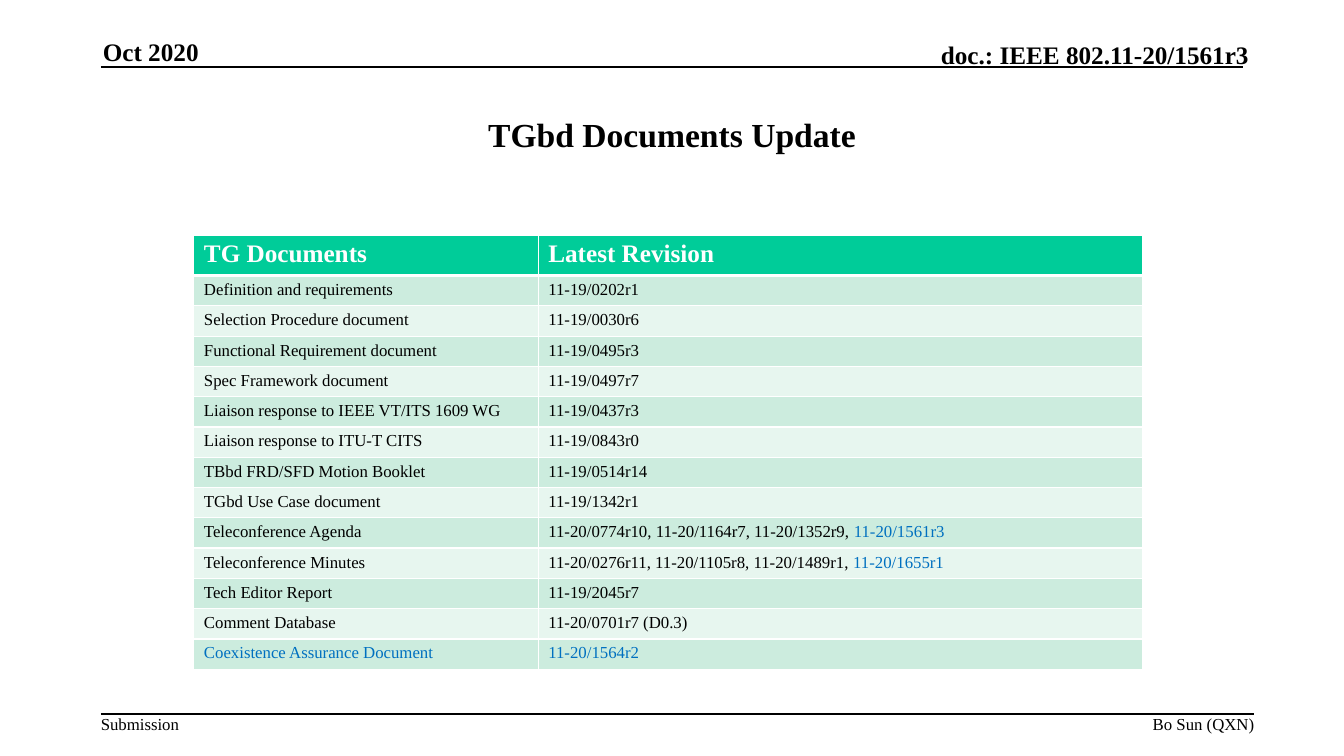
from dataclasses import dataclass

import lxml.etree
import pptx
import pptx.dml.color
import pptx.enum.shapes
import pptx.enum.text
import pptx.oxml.ns
import pptx.util

Pt = pptx.util.Pt
Align = pptx.enum.text.PP_ALIGN
Anchor = pptx.enum.text.MSO_ANCHOR
qn = pptx.oxml.ns.qn

FONT = "Times New Roman"
COLORS = {
    "black": "000000",
    "white": "FFFFFF",
    "blue": "0070C0",
    "header": "00CC99",
    "odd": "CCECDE",
    "even": "E7F6EF",
}
COLUMN_WIDTHS = (246, 432)
HEADER_HEIGHT = 27
ROW_HEIGHT = 20.5


@dataclass
class Label:
    text: str
    left: float
    top: float
    width: float
    height: float
    size: float
    bold: bool = False
    align: Align = Align.LEFT
    anchor: Anchor = Anchor.TOP


@dataclass
class Rule:
    left: float
    right: float
    y: float


@dataclass
class Document:
    name: str
    revisions: str = ""
    update: str = ""
    name_color: str = "black"


LABELS = [
    Label("Oct 2020", 73.5, 26, 196.5, 21.5, 18, True, anchor=Anchor.BOTTOM),
    Label("doc.: IEEE 802.11-20/1561r3", 525, 28, 367, 21.5, 18, True, Align.RIGHT, Anchor.BOTTOM),
    Label("TGbd Documents Update", 72, 54, 816, 83.5, 24, True, Align.CENTER, Anchor.MIDDLE),
    Label("Submission", 72, 510, 56, 14.5, 12),
    Label("Bo Sun (QXN)", 562, 510, 334, 14.5, 12, align=Align.RIGHT),
]
RULES = [Rule(72, 888, 48), Rule(72, 896, 510)]
DOCUMENTS = [
    Document("Definition and requirements", "11-19/0202r1"),
    Document("Selection Procedure document", "11-19/0030r6"),
    Document("Functional Requirement document", "11-19/0495r3"),
    Document("Spec Framework document", "11-19/0497r7"),
    Document("Liaison response to IEEE VT/ITS 1609 WG", "11-19/0437r3"),
    Document("Liaison response to ITU-T CITS", "11-19/0843r0"),
    Document("TBbd FRD/SFD Motion Booklet", "11-19/0514r14"),
    Document("TGbd Use Case document", "11-19/1342r1"),
    Document("Teleconference Agenda", "11-20/0774r10, 11-20/1164r7, 11-20/1352r9, ", "11-20/1561r3"),
    Document("Teleconference Minutes", "11-20/0276r11, 11-20/1105r8, 11-20/1489r1, ", "11-20/1655r1"),
    Document("Tech Editor Report", "11-19/2045r7"),
    Document("Comment Database", "11-20/0701r7 (D0.3)"),
    Document("Coexistence Assurance Document", update="11-20/1564r2", name_color="blue"),
]


def rgb(name: str) -> pptx.dml.color.RGBColor:
    return pptx.dml.color.RGBColor.from_string(COLORS[name])


def set_font(font, size: float, bold: bool) -> None:
    font.name = FONT
    font.size = Pt(size)
    font.bold = bold


def add_label(slide, label: Label) -> None:
    sp = slide.shapes.add_textbox(Pt(label.left), Pt(label.top), Pt(label.width), Pt(label.height))
    tf = sp.text_frame
    tf.word_wrap = True
    tf.vertical_anchor = label.anchor
    tf.margin_left = tf.margin_right = tf.margin_top = tf.margin_bottom = 0
    p = tf.paragraphs[0]
    p.text = label.text
    p.alignment = label.align
    set_font(p.font, label.size, label.bold)
    p.font.color.rgb = rgb("black")


def add_rule(slide, rule: Rule) -> None:
    sp = slide.shapes.add_connector(
        pptx.enum.shapes.MSO_CONNECTOR.STRAIGHT,
        Pt(rule.left), Pt(rule.y), Pt(rule.right), Pt(rule.y),
    )
    sp.line.color.rgb = rgb("black")
    sp.line.width = Pt(1)
    lxml.etree.SubElement(sp._element.spPr, qn("a:effectLst"))


def style_cell(cell, fill: str, top: float, bottom: float) -> None:
    tc_pr = cell._tc.get_or_add_tcPr()
    for side, width in (("L", 1), ("R", 1), ("T", top), ("B", bottom)):
        ln = lxml.etree.SubElement(tc_pr, qn(f"a:ln{side}"), w=str(Pt(width)))
        solid = lxml.etree.SubElement(ln, qn("a:solidFill"))
        lxml.etree.SubElement(solid, qn("a:srgbClr"), val=COLORS["white"])
    cell.fill.solid()
    cell.fill.fore_color.rgb = rgb(fill)


def write_cell(cell, parts: list[tuple[str, str]], size: float, bold: bool) -> None:
    p = cell.text_frame.paragraphs[0]
    set_font(p.font, size, bold)
    for text, color in parts:
        if text:
            r = p.add_run()
            r.text = text
            r.font.color.rgb = rgb(color)


def add_documents_table(slide) -> None:
    height = HEADER_HEIGHT + ROW_HEIGHT * len(DOCUMENTS)
    table = slide.shapes.add_table(
        len(DOCUMENTS) + 1, len(COLUMN_WIDTHS),
        Pt(138.5), Pt(168), Pt(sum(COLUMN_WIDTHS)), Pt(height),
    ).table
    table.horz_banding = False
    for column, width in zip(table.columns, COLUMN_WIDTHS):
        column.width = Pt(width)
    table.rows[0].height = Pt(HEADER_HEIGHT)
    for cell, heading in zip(table.rows[0].cells, ("TG Documents", "Latest Revision")):
        style_cell(cell, "header", 1, 3)
        write_cell(cell, [(heading, "white")], 18, True)
    for i, doc in enumerate(DOCUMENTS, 1):
        table.rows[i].height = Pt(ROW_HEIGHT)
        contents = (
            [(doc.name, doc.name_color)],
            [(doc.revisions, "black"), (doc.update, "blue")],
        )
        for cell, parts in zip(table.rows[i].cells, contents):
            style_cell(cell, "odd" if i % 2 else "even", 3 if i == 1 else 1, 1)
            write_cell(cell, parts, 12, False)


def main() -> None:
    prs = pptx.Presentation()
    prs.slide_width, prs.slide_height = Pt(960), Pt(540)
    slide = prs.slides.add_slide(prs.slide_layouts[6])
    for rule in RULES:
        add_rule(slide, rule)
    for label in LABELS:
        add_label(slide, label)
    add_documents_table(slide)
    prs.save("out.pptx")


if __name__ == "__main__":
    main()
